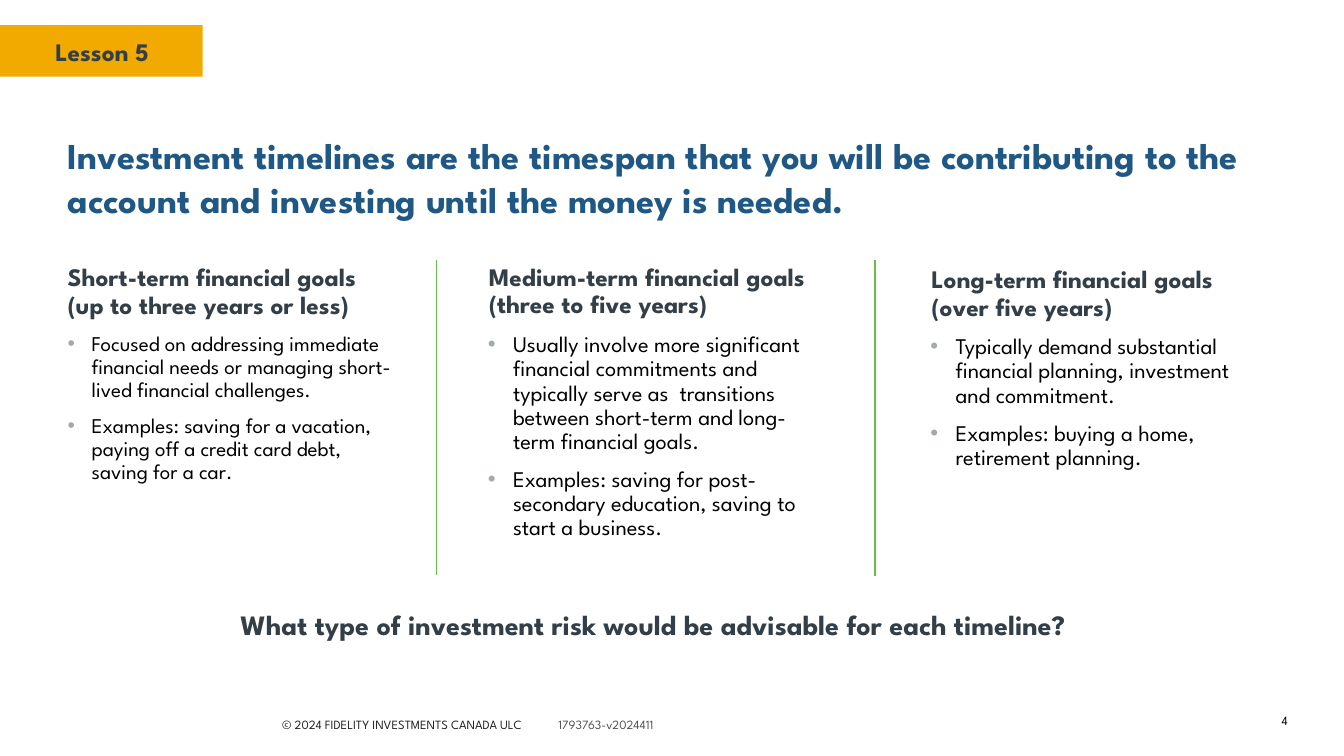
"""Build the Lesson 5 slide on investment timelines."""
import pptx
import pptx.dml.color
import pptx.enum.shapes
import pptx.enum.text
import pptx.oxml
import pptx.oxml.ns
import pptx.util

Inches = pptx.util.Inches
Pt = pptx.util.Pt
Align = pptx.enum.text.PP_ALIGN
Anchor = pptx.enum.text.MSO_ANCHOR

FONT = "League Spartan"
SLATE, BLUE, BLACK = "333F48", "205885", "000000"
GOLD, GREEN, GREY = "F2A900", "6ABD4A", "A2AAAD"

LESSON = "Lesson 5"
TITLE = ("Investment timelines are the timespan that you will be contributing "
         "to the account and investing until the money is needed.")
QUESTION = "What type of investment risk would be advisable for each timeline?"
COPYRIGHT = "© 2024 FIDELITY INVESTMENTS CANADA ULC"
VERSION = "1793763-v2024411"
PAGE_NUMBER = "4"

GOALS = [
    {"left": 0.56, "top": 2.58, "size": 15, "hang": 0.24,
     "heading": "Short-term financial goals (up to three years or less)",
     "points": ["Focused on addressing immediate financial needs or managing "
                "short-lived financial challenges.",
                "Examples: saving for a vacation, paying off a credit card debt, "
                "saving for a car."]},
    {"left": 4.74, "top": 2.58, "size": 16, "hang": 0.25,
     "heading": "Medium-term financial goals (three to five years)",
     "points": ["Usually involve more significant financial commitments and "
                "typically serve as  transitions between short-term and "
                "long-term financial goals.",
                "Examples: saving for post-secondary education, saving to start "
                "a business."]},
    {"left": 9.13, "top": 2.6, "size": 16, "hang": 0.25,
     "heading": "Long-term financial goals (over five years)",
     "points": ["Typically demand substantial financial planning, investment and "
                "commitment.",
                "Examples: buying a home, retirement planning."]},
]
GOAL_SIZE = (3.48, 3.27)
DIVIDERS = [(4.33, 2.58, 5.7), (8.68, 2.58, 5.71)]


def color(code):
    return pptx.dml.color.RGBColor.from_string(code)


def add_element(parent, tag, inner="", **attributes):
    listed = " ".join(f'{name}="{value}"' for name, value in attributes.items())
    namespace = pptx.oxml.ns.nsdecls("a")
    parent.append(pptx.oxml.parse_xml(
        f"<a:{tag} {namespace} {listed}>{inner}</a:{tag}>"))


def add_span(para, text, size, code, bold=False):
    span = para.add_run()
    span.text = text
    span.font.name = FONT
    span.font.size = Pt(size)
    span.font.bold = bold
    span.font.color.rgb = color(code)


def place(box, left, top, width, height, anchor=Anchor.TOP):
    box.left, box.top = Inches(left), Inches(top)
    box.width, box.height = Inches(width), Inches(height)
    frame = box.text_frame
    frame.word_wrap = True
    frame.auto_size = pptx.enum.text.MSO_AUTO_SIZE.NONE
    frame.vertical_anchor = anchor
    return frame


def add_box(page, left, top, width, height, anchor=Anchor.TOP):
    box = page.shapes.add_textbox(0, 0, 0, 0)
    return place(box, left, top, width, height, anchor)


def fill_goal(frame, goal):
    para = frame.paragraphs[0]
    properties = para._p.get_or_add_pPr()
    properties.set("marL", str(Inches(0.01)))
    properties.set("indent", "0")
    add_element(properties, "buNone")
    para.line_spacing = 0.9
    para.space_before = Pt(0)
    add_span(para, goal["heading"], 18, SLATE, True)
    for point in goal["points"]:
        para = frame.add_paragraph()
        properties = para._p.get_or_add_pPr()
        properties.set("marL", str(Inches(0.25)))
        properties.set("indent", str(-Inches(goal["hang"])))
        add_element(properties, "buClr", f'<a:srgbClr val="{GREY}"/>')
        add_element(properties, "buFont", typeface="Arial")
        add_element(properties, "buChar", char="•")
        para.line_spacing = 0.9
        para.space_before = Pt(10)
        add_span(para, point, goal["size"], BLACK)


def add_divider(page, x, top, bottom):
    line = page.shapes.add_connector(
        pptx.enum.shapes.MSO_CONNECTOR.STRAIGHT,
        Inches(x), Inches(top), Inches(x), Inches(bottom))
    line.line.color.rgb = color(GREEN)
    line.line.width = Pt(1)
    add_element(line._element.spPr, "effectLst")


def main():
    deck = pptx.Presentation()
    deck.slide_width, deck.slide_height = Inches(13.33), Inches(7.5)
    page = deck.slides.add_slide(deck.slide_layouts[1])

    banner = page.shapes.add_shape(
        pptx.enum.shapes.MSO_SHAPE.RECTANGLE,
        0, Inches(0.25), Inches(2.01), Inches(0.51))
    banner.shadow.inherit = False
    banner.fill.solid()
    banner.fill.fore_color.rgb = color(GOLD)
    banner.line.fill.background()
    lesson = add_box(page, 0.45, 0.31, 1.31, 0.4)
    add_span(lesson.paragraphs[0], LESSON, 18, SLATE, True)

    title = place(page.shapes.title, 0.57, 1.27, 12.2, 0.58)
    title.paragraphs[0].alignment = Align.LEFT
    add_span(title.paragraphs[0], TITLE, 26, BLUE, True)

    first, *others = GOALS
    body = place(page.placeholders[1], first["left"], first["top"], *GOAL_SIZE)
    fill_goal(body, first)
    for goal in others:
        fill_goal(add_box(page, goal["left"], goal["top"], *GOAL_SIZE), goal)
    for divider in DIVIDERS:
        add_divider(page, *divider)

    question = add_box(page, 1.66, 5.98, 9.64, 0.44)
    question.paragraphs[0].alignment = Align.CENTER
    add_span(question.paragraphs[0], QUESTION, 20, SLATE, True)

    footer = add_box(page, 2.7, 7.06, 4.3, 0.25).paragraphs[0]
    add_element(footer._p.get_or_add_pPr(), "tabLst",
                f'<a:tab pos="{Inches(2.74)}" algn="l"/>')
    add_span(footer, COPYRIGHT + "\t", 9, "222222")
    add_span(footer, VERSION, 9, "545454")

    number = add_box(page, 12.17, 7.06, 0.7, 0.18, Anchor.MIDDLE)
    number.paragraphs[0].alignment = Align.RIGHT
    add_span(number.paragraphs[0], PAGE_NUMBER, 9, BLACK)

    deck.save("out.pptx")


if __name__ == "__main__":
    main()
